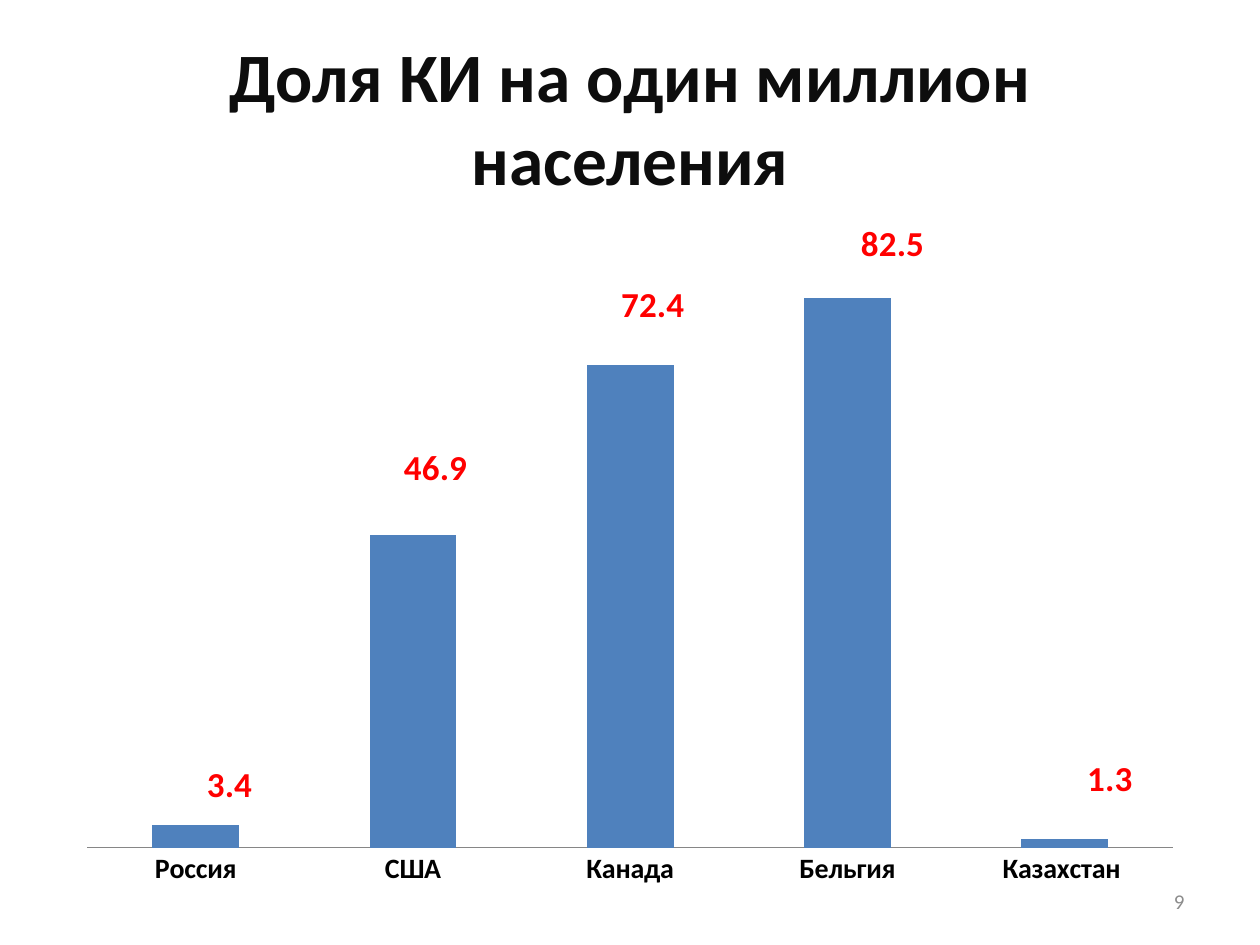
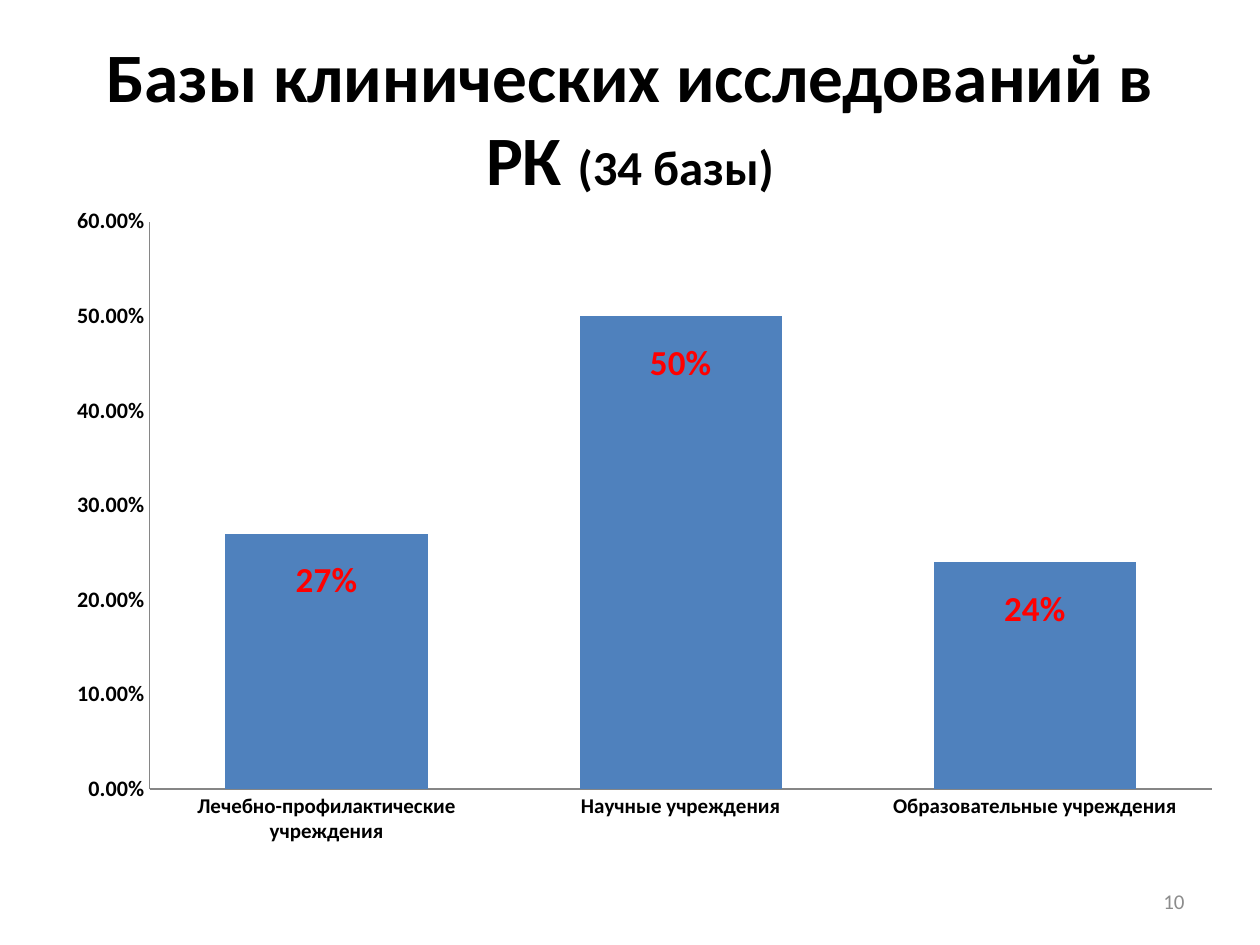
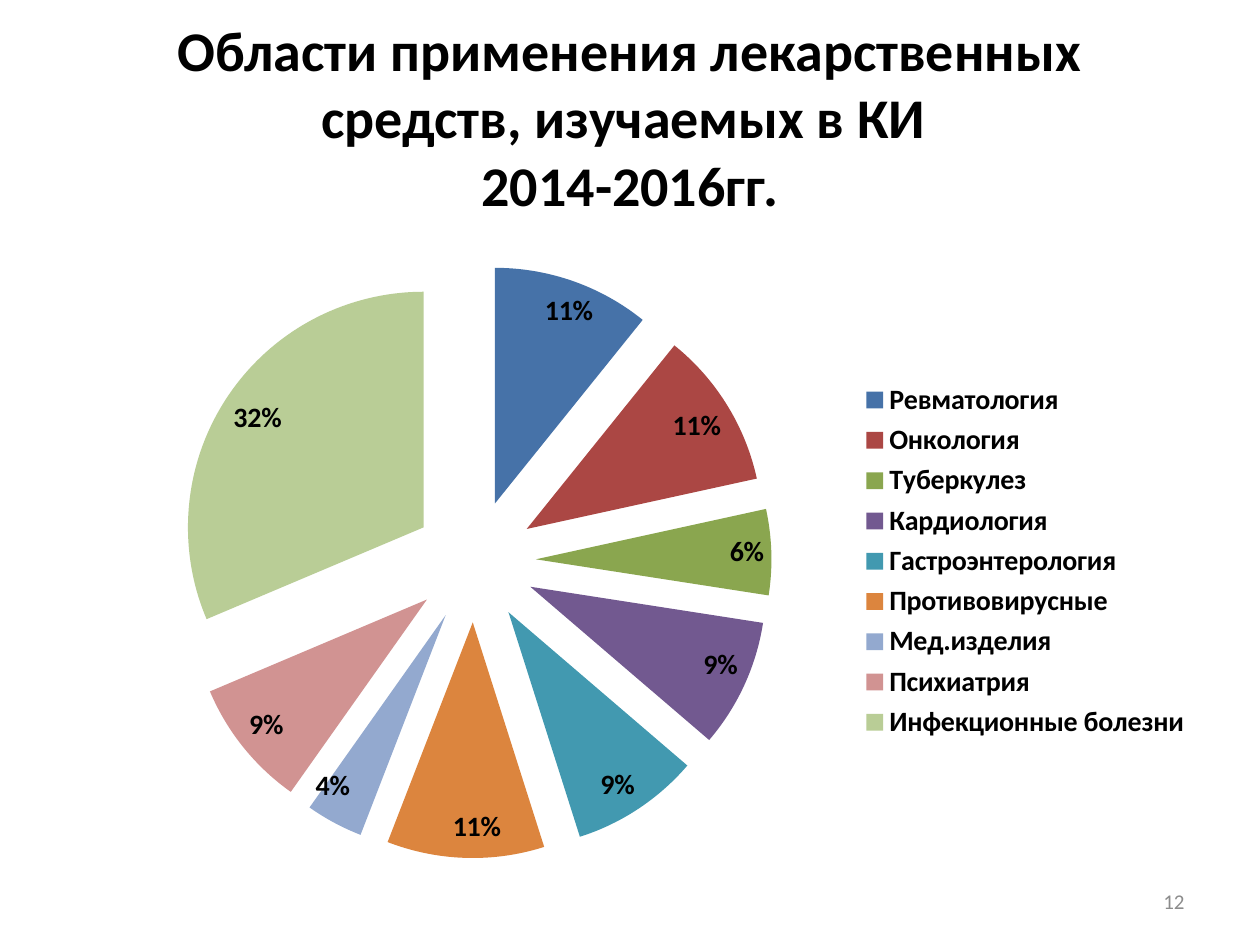
"""Build three chart slides about clinical research."""
from dataclasses import dataclass

from lxml.etree import SubElement
from pptx import Presentation
from pptx.chart.data import CategoryChartData
from pptx.dml.color import RGBColor
from pptx.enum.chart import XL_CHART_TYPE, XL_LABEL_POSITION, XL_LEGEND_POSITION, XL_TICK_MARK
from pptx.enum.text import MSO_ANCHOR, PP_ALIGN
from pptx.oxml.ns import qn
from pptx.util import Cm, Pt


@dataclass(frozen=True)
class Theme:
    font: str = "Calibri"
    black: str = "000000"
    heading: str = "0D0D0D"
    muted: str = "8C8C8C"
    axis: str = "868686"
    bar: str = "4F81BD"
    accent: str = "FF0000"
    slices: tuple = ("4672A8", "AB4744", "8AA64F", "725990", "4299B0",
                     "DC853E", "93A9CF", "D19392", "B9CD96")
    title_size: float = 39.6
    title_note_size: float = 27.9
    long_title_size: float = 32
    number_size: float = 12
    value_size: float = 20
    chart_size: float = 16
    small_size: float = 12
    scale_size: float = 12.6
    base_size: float = 10


THEME = Theme()
SLIDE_SIZE = (25.4, 19.05)
TITLE_BOX = (1.27, 0.76, 22.86, 3.18)
NUMBER_BOX = (18.21, 17.65, 5.92, 1.02)

SLIDES = [
    {
        "number": "9",
        "title": [("Доля КИ на один миллион населения", THEME.title_size)],
        "title_color": THEME.heading,
        "kind": XL_CHART_TYPE.COLUMN_CLUSTERED,
        "box": (1.3, 4.45, 22.81, 13.59),
        "plot": (0.02, 0.04, 0.96, 0.89),
        "data": [("Россия", 3.4), ("США", 46.9), ("Канада", 72.4),
                 ("Бельгия", 82.5), ("Казахстан ", 1.3)],
        "format": "General",
        "gap": 150, "overlap": 0, "maximum": 90, "step": 10,
        "category_size": THEME.chart_size, "scale_format": None,
        "label_position": XL_LABEL_POSITION.OUTSIDE_END,
        "label_shifts": [(0.03, -0.02), (0.02, -0.06), (0.02, -0.05),
                         (0.04, -0.04), (0.04, -0.05)],
    },
    {
        "number": "10",
        "title": [("Базы клинических исследований в РК ", THEME.title_size),
                  ("(34 базы)", THEME.title_note_size)],
        "title_color": THEME.black,
        "kind": XL_CHART_TYPE.COLUMN_STACKED,
        "box": (1.11, 3.94, 23.8, 13.3),
        "plot": (0.08, 0.04, 0.9, 0.86),
        "data": [("Лечебно-профилактические учреждения", 0.27),
                 ("Научные учреждения", 0.5),
                 ("Образовательные учреждения", 0.24)],
        "format": "0%",
        "gap": 75, "overlap": 100, "maximum": 0.6, "step": 0.1,
        "category_size": THEME.small_size, "scale_format": "0.00%",
        "label_position": XL_LABEL_POSITION.INSIDE_END,
        "label_shifts": [(0, 0.03)] * 3,
    },
    {
        "number": "12",
        "title": [("Области применения лекарственных средств, изучаемых в КИ \n2014-2016гг.",
                   THEME.long_title_size)],
        "title_color": THEME.black,
        "kind": XL_CHART_TYPE.PIE,
        "box": (1.91, 5.33, 22.2, 12.6),
        "plot": (0, 0, 0.69, 0.95),
        "legend": (0.69, 0.18, 0.31, 0.59),
        "data": [("Ревматология", 11), ("Онкология", 11), ("Туберкулез", 6),
                 ("Кардиология", 9), ("Гастроэнтерология", 9),
                 ("Противовирусные", 11), ("Мед.изделия", 4),
                 ("Психиатрия", 9), ("Инфекционные болезни", 32)],
        "format": '0"%"',
        "explosion": 26,
        "label_position": XL_LABEL_POSITION.INSIDE_END,
        "label_shifts": [(0.02, 0.01), (0, 0), (0, 0), (0, 0), (0, 0),
                         (0.01, -0.01), (-0.02, -0.02), (0, 0), (0, 0)],
    },
]


def set_font(font, size, color=THEME.black, bold=True):
    font.name = THEME.font
    font.size = Pt(size)
    font.bold = bold
    font.color.rgb = RGBColor.from_string(color)


def add_text(page, spans, box, color=THEME.black, bold=False, align=PP_ALIGN.CENTER):
    frame = page.shapes.add_textbox(*map(Cm, box)).text_frame
    frame.word_wrap = True
    frame.vertical_anchor = MSO_ANCHOR.MIDDLE
    para = frame.paragraphs[0]
    para.alignment = align
    for text, size in spans:
        for index, line in enumerate(text.split("\n")):
            if index:
                para.add_line_break()
            span = para.add_run()
            span.text = line
            set_font(span.font, size, color, bold)


def set_layout(parent, position, **values):
    for former in parent.findall(qn("c:layout")):
        parent.remove(former)
    layout = parent.makeelement(qn("c:layout"))
    parent.insert(position, layout)
    manual = SubElement(layout, qn("c:manualLayout"))
    for name, value in values.items():
        SubElement(manual, qn(f"c:{name}")).set("val", str(value))


def set_frame(parent, position, frame, **values):
    left, top, width, height = frame
    set_layout(parent, position, **values, xMode="edge", yMode="edge",
               x=left, y=top, w=width, h=height)


def paint(shape_format, color):
    shape_format.fill.solid()
    shape_format.fill.fore_color.rgb = RGBColor.from_string(color)


def style_axis(axis, size):
    axis.has_major_gridlines = False
    axis.major_tick_mark = axis.minor_tick_mark = XL_TICK_MARK.NONE
    axis.format.line.color.rgb = RGBColor.from_string(THEME.axis)
    set_font(axis.tick_labels.font, size)


def style_labels(series, content, size, color):
    labels = series.data_labels
    set_font(labels.font, size, color)
    labels.number_format = content["format"]
    labels.number_format_is_linked = False
    labels.position = content["label_position"]
    labels.show_value = True
    labels.show_percentage = False
    for leader in series._element.iter(qn("c:showLeaderLines")):
        leader.set("val", "0")
    for index, shift in enumerate(content["label_shifts"]):
        if any(shift):
            label = series.points[index].data_label
            set_font(label.font, size, color)
            label.position = content["label_position"]
    shifts = filter(any, content["label_shifts"])
    for element, (across, down) in zip(series._element.iter(qn("c:dLbl")), shifts):
        set_layout(element, 1, x=across, y=down)


def style_columns(chart, content):
    plot = chart.plots[0]
    plot.gap_width, plot.overlap = content["gap"], content["overlap"]
    style_axis(chart.category_axis, content["category_size"])
    scale = chart.value_axis
    style_axis(scale, THEME.scale_size)
    scale.minimum_scale, scale.maximum_scale = 0, content["maximum"]
    scale.major_unit = content["step"]
    if content["scale_format"]:
        scale.tick_labels.number_format = content["scale_format"]
        scale.tick_labels.number_format_is_linked = False
    else:
        scale.visible = False
    series = plot.series[0]
    paint(series.format, THEME.bar)
    style_labels(series, content, THEME.value_size, THEME.accent)


def style_pie(chart, content):
    series = chart.plots[0].series[0]
    for index, color in enumerate(THEME.slices):
        paint(series.points[index].format, color)
    style_labels(series, content, THEME.chart_size, THEME.black)
    explosion = series._element.makeelement(qn("c:explosion"))
    explosion.set("val", str(content["explosion"]))
    series._element.find(qn("c:dPt")).addprevious(explosion)
    chart.has_legend = True
    legend = chart.legend
    legend.position = XL_LEGEND_POSITION.RIGHT
    legend.include_in_layout = False
    set_font(legend.font, THEME.chart_size)
    set_frame(legend._element, 1, content["legend"])


def add_chart(page, content):
    chart_data = CategoryChartData(number_format=content["format"])
    categories, values = zip(*content["data"])
    chart_data.categories = categories
    chart_data.add_series("Series 1", values)
    chart = page.shapes.add_chart(content["kind"], *map(Cm, content["box"]), chart_data).chart
    chart.has_title = chart.has_legend = False
    set_font(chart.font, THEME.base_size, bold=False)
    plot = chart.plots[0]
    is_pie = content["kind"] == XL_CHART_TYPE.PIE
    plot.vary_by_categories = is_pie
    set_frame(plot._element.getparent(), 0, content["plot"], layoutTarget="inner")
    (style_pie if is_pie else style_columns)(chart, content)


def main():
    deck = Presentation()
    deck.slide_width, deck.slide_height = map(Cm, SLIDE_SIZE)
    for content in SLIDES:
        page = deck.slides.add_slide(deck.slide_layouts[6])
        add_text(page, content["title"], TITLE_BOX, color=content["title_color"], bold=True)
        add_text(page, [(content["number"], THEME.number_size)], NUMBER_BOX,
                 color=THEME.muted, align=PP_ALIGN.RIGHT)
        add_chart(page, content)
    deck.save("out.pptx")


if __name__ == "__main__":
    main()
